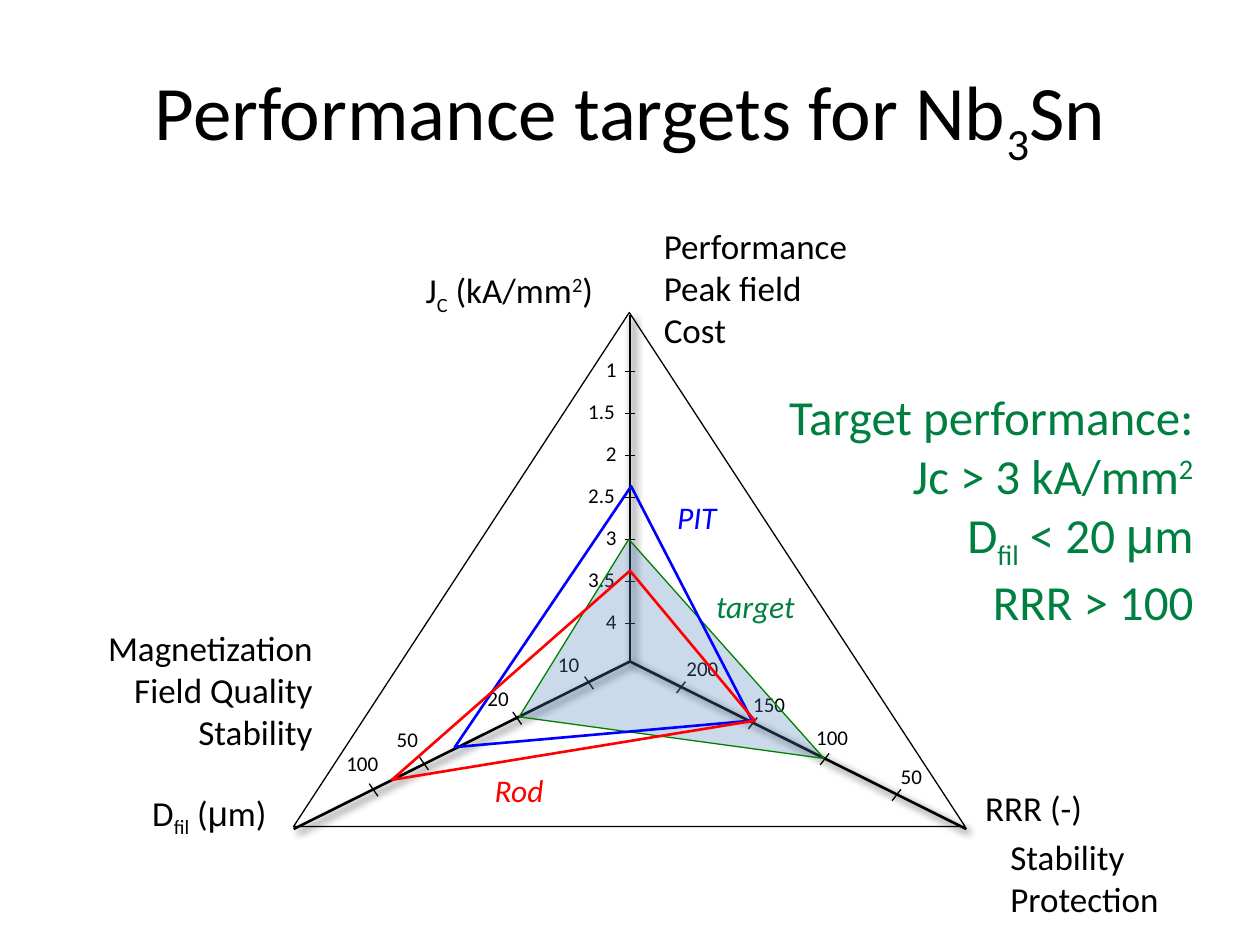
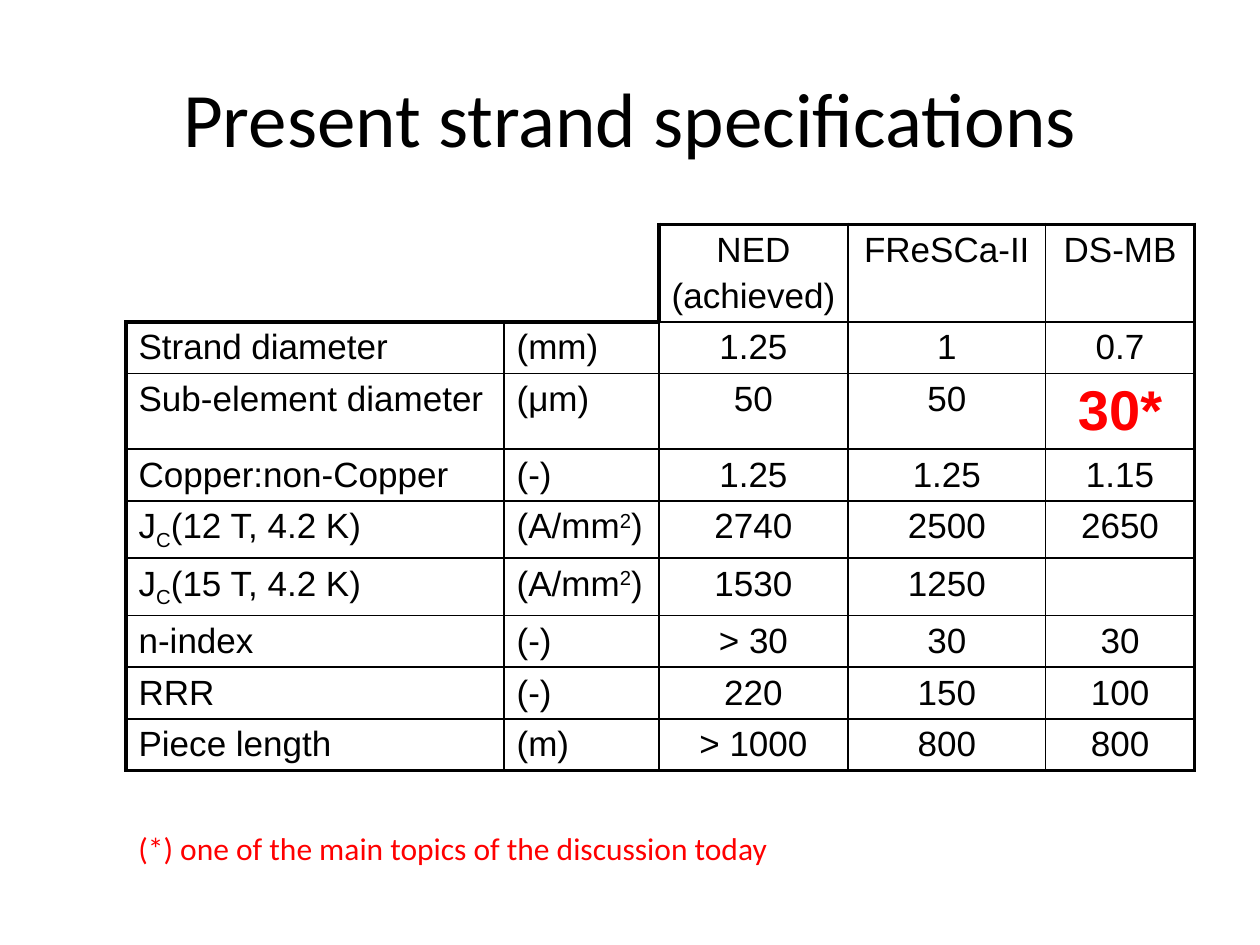
import pptx
import pptx.dml.color
import pptx.enum.shapes
import pptx.enum.text
import pptx.oxml
import pptx.oxml.ns
import pptx.util
from pptx.util import Inches

# Shared look
COLOURS = {"black": "000000", "blue": "0000FF", "red": "FF0000",
           "target": "008040", "target_edge": "008000", "target_fill": "4F81BD"}
ALIGN = pptx.enum.text.PP_ALIGN
ANCHOR = pptx.enum.text.MSO_ANCHOR
AUTO_SIZE = pptx.enum.text.MSO_AUTO_SIZE
NAMESPACE = pptx.oxml.ns.nsdecls("a")
BASELINES = {"_": "-25000", "^": "30000"}
TITLE_FORMAT = {"size": pptx.util.Pt(44), "name": "Calibri"}
LABEL_FORMAT = {"size": pptx.util.Pt(20), "name": "Calibri"}
TICK_FORMAT = {"size": pptx.util.Pt(12), "name": "Calibri"}
SERIES_FORMAT = {"size": pptx.util.Pt(18), "name": "Calibri", "italic": True}
TARGET_FORMAT = {"size": pptx.util.Pt(28), "name": "Calibri"}
NOTE_FORMAT = {"size": pptx.util.Pt(18), "name": "Calibri"}
CELL_FORMAT = {"size": pptx.util.Pt(20), "name": "Arial"}
ACCENT_FORMAT = {"size": pptx.util.Pt(32), "name": "Arial", "bold": True}

# Chart geometry and labels
CENTRE = (5, 5.25)
CORNERS = [(5, 2.5), (2.33, 6.58), (7.67, 6.58)]
JC_VALUES = ["1", "1.5", "2", "2.5", "3", "3.5", "4"]
RRR_LABELS = [("200", 5.35, 5.15), ("150", 5.88, 5.44),
              ("100", 6.38, 5.7), ("50", 7.05, 6.01)]
FILAMENT_LABELS = [("10", 4.33, 5.12), ("20", 3.77, 5.39),
                   ("50", 3.05, 5.72), ("100", 2.65, 5.91)]
FILAMENT_TICKS = [(4.64, 5.37), (4.07, 5.65), (3.33, 6.01), (2.93, 6.22)]

# In texts, | separates runs; _ starts a subscript run and ^ a superscript run
SPECIFICATIONS = [
    ["", "", "NED\n(achieved)", "FReSCa-II", "DS-MB"],
    ["Strand diameter", "(mm)", "1.25", "1", "0.7"],
    ["Sub-element diameter", "(μm)", "50", "50", "30*"],
    ["Copper:non-Copper", "(-)", "1.25", "1.25", "1.15"],
    ["J|_C|(12 T, 4.2 K)", "(A/mm|^2|)", "2740", "2500", "2650"],
    ["J|_C|(15 T, 4.2 K)", "(A/mm|^2|)", "1530", "1250", ""],
    ["n-index", "(-)", "> 30", "30", "30"],
    ["RRR", "(-)", "220", "150", "100"],
    ["Piece length", "(m)", "> 1000", "800", "800"],
]
COLUMN_WIDTHS = [3, 1.23, 1.5, 1.57, 1.18]
ROW_HEIGHT = 0.39


def rgb(colour):
    return pptx.dml.color.RGBColor.from_string(COLOURS[colour])


def write_text(frame, text, text_format, colour="black", align=ALIGN.LEFT, gap=0):
    for index, line in enumerate(text.split("\n")):
        paragraph = frame.paragraphs[0] if index == 0 else frame.add_paragraph()
        paragraph.alignment = align
        if index and gap:
            paragraph.space_before = pptx.util.Pt(gap)
        for part in line.split("|"):
            if not part:
                continue
            run = paragraph.add_run()
            run.text = part.lstrip("_^")
            for name, value in text_format.items():
                setattr(run.font, name, value)
            run.font.color.rgb = rgb(colour)
            if part == "μ":
                run.font.name = "Arial"
            if part[0] in BASELINES:
                run.font._element.set("baseline", BASELINES[part[0]])


def add_titled_slide(presentation, title):
    slide = presentation.slides.add_slide(presentation.slide_layouts[5])
    shape = slide.shapes.title
    box = {"left": 0.5, "top": 0.3, "width": 9, "height": 1.25}
    for name, value in box.items():
        setattr(shape, name, Inches(value))
    shape.text_frame.vertical_anchor = ANCHOR.MIDDLE
    write_text(shape.text_frame, title, TITLE_FORMAT, align=ALIGN.CENTER)
    return slide


def add_label(slide, text, box, text_format=LABEL_FORMAT, colour="black",
              align=ALIGN.LEFT, anchor=ANCHOR.TOP, wrap=False):
    frame = slide.shapes.add_textbox(*map(Inches, box)).text_frame
    settings = {"word_wrap": wrap, "vertical_anchor": anchor,
                "auto_size": AUTO_SIZE.SHAPE_TO_FIT_TEXT}
    for name, value in settings.items():
        setattr(frame, name, value)
    write_text(frame, text, text_format, colour, align)


def add_line(slide, start, end, width=0.75, shadow=False):
    line = slide.shapes.add_connector(pptx.enum.shapes.MSO_CONNECTOR.STRAIGHT,
                                      *map(Inches, (*start, *end)))
    line.line.color.rgb = rgb("black")
    line.line.width = pptx.util.Pt(width)
    effect = ('<a:outerShdw blurRad="63500" dist="35560" dir="2700000">'
              f'<a:srgbClr val="{COLOURS["black"]}"><a:alpha val="75000"/></a:srgbClr>'
              '</a:outerShdw>') if shadow else ""
    line._element.spPr.append(pptx.oxml.parse_xml(
        f"<a:effectLst {NAMESPACE}>{effect}</a:effectLst>"))


def tick_width(text):
    dots = text.count(".")
    return 0.2 + 0.09 * (len(text) - dots) + 0.05 * dots


def add_tick_label(slide, text, left, top):
    add_label(slide, text, (left, top, tick_width(text), 0.3), TICK_FORMAT)


def style_outline(shape, colour, width):
    shape.shadow.inherit = False
    shape.fill.background()
    shape.line.color.rgb = rgb(colour)
    shape.line.width = pptx.util.Pt(width)


def add_series(slide, points, colour, width, fill=None, opacity=100):
    first, *others = [tuple(map(Inches, point)) for point in points]
    builder = slide.shapes.build_freeform(*first)
    builder.add_line_segments(others, close=True)
    shape = builder.convert_to_shape()
    style_outline(shape, colour, width)
    if fill:
        shape.fill.solid()
        shape.fill.fore_color.rgb = rgb(fill)
        fill_colour = shape._element.spPr.find(".//" + pptx.oxml.ns.qn("a:srgbClr"))
        fill_colour.append(pptx.oxml.parse_xml(
            f'<a:alpha {NAMESPACE} val="{opacity * 1000}"/>'))


def add_axes(slide):
    triangle = slide.shapes.add_shape(
        pptx.enum.shapes.MSO_SHAPE.ISOSCELES_TRIANGLE,
        *map(Inches, (2.33, 2.48, 5.33, 4.08)))
    style_outline(triangle, "black", 0.75)
    for corner in CORNERS:
        add_line(slide, CENTRE, corner, 1.5, shadow=True)

    # Current density scale runs down the vertical axis
    for index, value in enumerate(JC_VALUES):
        offset = index / 3
        add_line(slide, (4.96, 2.95 + offset), (5.04, 2.95 + offset))
        add_tick_label(slide, value, 5 - tick_width(value), 2.78 + offset)

    # RRR and filament scales run along the slanted axes
    for index, label in enumerate(RRR_LABELS):
        x, y = 5.37 + 0.57 * index, 5.5 + 0.285 * index
        add_line(slide, (x, y), (x + 0.07, y - 0.09))
        add_tick_label(slide, *label)
    for (x, y), label in zip(FILAMENT_TICKS, FILAMENT_LABELS):
        add_line(slide, (x + 0.07, y + 0.1), (x, y))
        add_tick_label(slide, *label)


def add_border(properties, side, width):
    if width:
        fill = f'<a:solidFill><a:srgbClr val="{COLOURS["black"]}"/></a:solidFill>'
    else:
        fill = "<a:noFill/>"
    return properties.append(pptx.oxml.parse_xml(
        f'<a:ln{side} {NAMESPACE} w="{int(width * 12700)}">{fill}</a:ln{side}>'))


def in_grid(row, column):
    in_range = 0 <= row < len(SPECIFICATIONS) and 0 <= column < len(COLUMN_WIDTHS)
    return in_range and not (row == 0 and column < 2)


def style_cell(cell, row, column):
    # Thin lines between cells, thick ones around the grid, none at the blank corner
    neighbours = {"L": (row, column - 1), "R": (row, column + 1),
                  "T": (row - 1, column), "B": (row + 1, column)}
    properties = cell._tc.get_or_add_tcPr()
    for side, neighbour in neighbours.items():
        add_border(properties, side,
                   (0, 2.25, 1)[in_grid(row, column) + in_grid(*neighbour)])
    cell.fill.background()


def add_specification_table(slide):
    rows, columns = len(SPECIFICATIONS), len(COLUMN_WIDTHS)
    table = slide.shapes.add_table(
        rows, columns, Inches(1), Inches(1.78),
        Inches(sum(COLUMN_WIDTHS)), Inches(ROW_HEIGHT * rows)).table
    table.first_row = table.horz_banding = False
    for column, width in zip(table.columns, COLUMN_WIDTHS):
        column.width = Inches(width)
    for row, texts in enumerate(SPECIFICATIONS):
        table.rows[row].height = Inches(ROW_HEIGHT)
        for column, text in enumerate(texts):
            cell = table.cell(row, column)
            style_cell(cell, row, column)
            accent = text.endswith("*")
            write_text(cell.text_frame, text,
                       ACCENT_FORMAT if accent else CELL_FORMAT,
                       "red" if accent else "black",
                       ALIGN.LEFT if column < 2 else ALIGN.CENTER, gap=4)
    table.cell(0, 0).merge(table.cell(0, 1))


def build_targets_slide(presentation):
    slide = add_titled_slide(presentation, "Performance targets for Nb|_3|Sn")
    add_axes(slide)

    # Axis names and what each one drives
    add_label(slide, "J|_C| (kA/mm|^2|)", (3.28, 2.08, 1.57, 0.44))
    add_label(slide, "D|_fil| (|μ|m)", (1.11, 6.23, 1.14, 0.44))
    add_label(slide, "RRR (-)", (7.72, 6.19, 0.98, 0.44))
    add_label(slide, "Performance\nPeak field\nCost", (5.17, 1.73, 2.17, 1.1), wrap=True)
    add_label(slide, "Stability Protection", (7.92, 6.58, 1.5, 0.77), wrap=True)
    add_label(slide, "Magnetization Field Quality\nStability",
              (0.5, 4.92, 2.08, 1.11), align=ALIGN.RIGHT, wrap=True)

    # Target area and the two strand types
    add_series(slide, [(4.99, 4.28), (4.12, 5.69), (6.54, 6.02)],
               "target_edge", 0.75, "target_fill", 29)
    for text, box, colour in [("PIT", (5.17, 3.85, 0.72, 0.5), "blue"),
                              ("Rod", (3.81, 6.07, 0.62, 0.4), "red"),
                              ("target", (5.47, 4.56, 1.05, 0.5), "target")]:
        add_label(slide, text, box, SERIES_FORMAT, colour, ALIGN.CENTER, ANCHOR.MIDDLE)
    add_series(slide, [(5.01, 3.86), (3.61, 5.93), (5.97, 5.72)], "blue", 1.5)
    add_series(slide, [(5, 4.53), (3.11, 6.19), (5.99, 5.72)], "red", 1.5)
    add_label(slide, "Target performance:\nJc > 3 kA/mm|^2\n"
              "D|_fil| < 20 |μ|m\nRRR > 100", (6.07, 3.04, 3.5, 1.99),
              TARGET_FORMAT, "target", ALIGN.RIGHT, ANCHOR.MIDDLE)


def build_specifications_slide(presentation):
    slide = add_titled_slide(presentation, "Present strand specifications")
    add_specification_table(slide)
    add_label(slide, "(*) one of the main topics of the discussion today",
              (1, 6.53, 5.25, 0.4), NOTE_FORMAT, "red")


def main():
    presentation = pptx.Presentation()
    presentation.slide_width = Inches(10)
    presentation.slide_height = Inches(7.5)
    build_targets_slide(presentation)
    build_specifications_slide(presentation)
    presentation.save("out.pptx")


if __name__ == "__main__":
    main()
